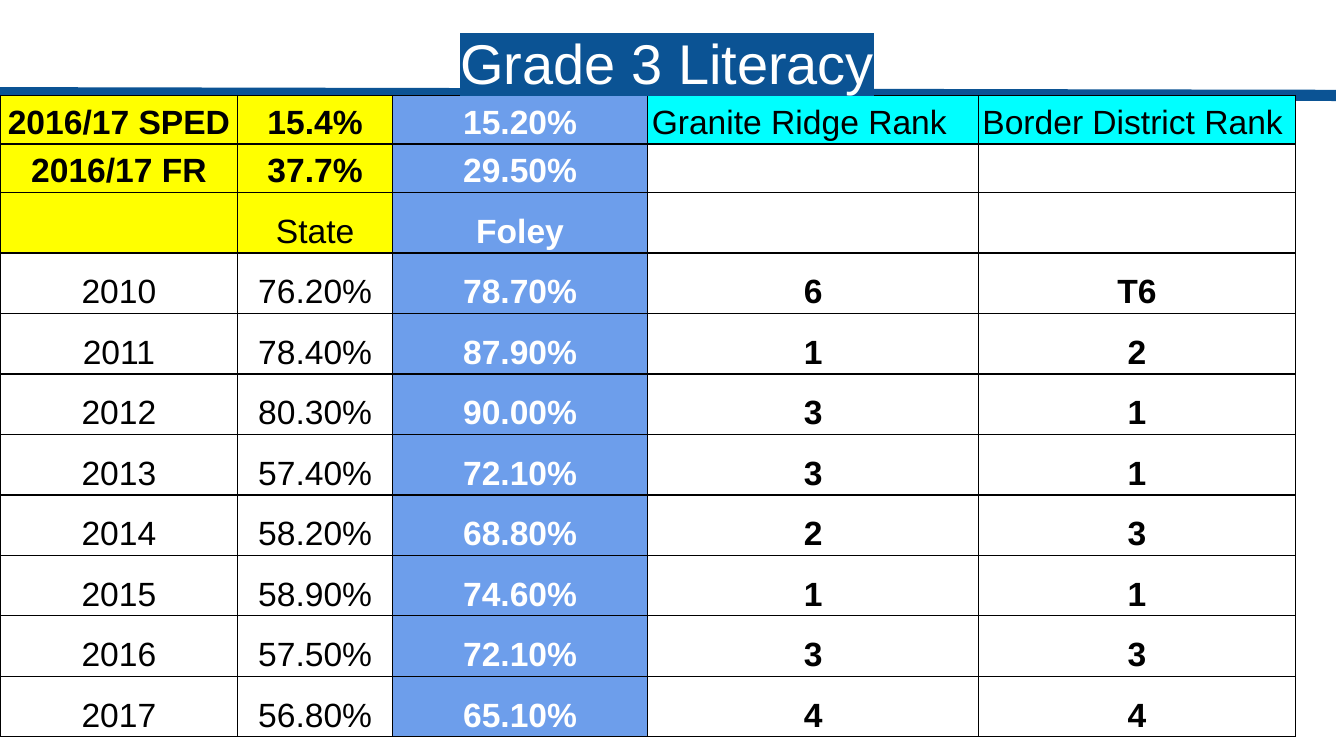
from lxml.etree import SubElement
from pptx import Presentation
from pptx.dml.color import RGBColor
from pptx.enum.shapes import MSO_CONNECTOR
from pptx.enum.text import MSO_ANCHOR, PP_ALIGN
from pptx.oxml import parse_xml
from pptx.oxml.ns import nsdecls, qn
from pptx.util import Inches, Pt

WIDE = 10
HIGH = WIDE * 9 / 16
NAVY, WHITE, BLACK = "0B5394", "FFFFFF", "000000"
YELLOW, BLUE, CYAN = "FFFF00", "6D9EEB", "00FFFF"
TOP = 0.71
COLS = [1.77, 1.15, 1.9, 2.46, 2.36]
ROWS = [0.36] * 2 + [0.45] * 9
HEAD = 3  # rows above the yearly results
DATA = [
    ["2016/17 SPED", "15.4%", "15.20%", "Granite Ridge Rank", "Border District Rank"],
    ["2016/17 FR", "37.7%", "29.50%", "", ""],
    ["", "State", "Foley", "", ""],
    ["2010", "76.20%", "78.70%", "6", "T6"],
    ["2011", "78.40%", "87.90%", "1", "2"],
    ["2012", "80.30%", "90.00%", "3", "1"],
    ["2013", "57.40%", "72.10%", "3", "1"],
    ["2014", "58.20%", "68.80%", "2", "3"],
    ["2015", "58.90%", "74.60%", "1", "1"],
    ["2016", "57.50%", "72.10%", "3", "3"],
    ["2017", "56.80%", "65.10%", "4", "4"],
]


def rgb(code):
    return RGBColor.from_string(code)


def style(par, size, color, bold=False, mark=None):
    for run in par.runs:
        font = run.font
        font.size, font.name, font.bold = Pt(size), "Arial", bold
        font.color.rgb = rgb(color)
        if mark:
            # The highlight follows the text fill
            run._r.rPr.find(qn("a:solidFill")).addnext(parse_xml(
                f'<a:highlight {nsdecls("a")}><a:srgbClr val="{mark}"/></a:highlight>'))


def inset(box, side, end):
    box.margin_left = box.margin_right = Inches(side)
    box.margin_top = box.margin_bottom = Inches(end)


def edge(cell):
    # Borders come before the fill in the cell properties
    props = cell._tc.get_or_add_tcPr()
    for spot, tag in enumerate(("lnL", "lnR", "lnT", "lnB")):
        props.insert(spot, parse_xml(
            f'<a:{tag} {nsdecls("a")} w="{Pt(0.75)}"><a:solidFill>'
            f'<a:srgbClr val="{BLACK}"/></a:solidFill></a:{tag}>'))


def shade(row, col):
    if col == 2:
        return BLUE
    if col < 2 and row < HEAD:
        return YELLOW
    return CYAN if row == 0 else None


def fill_cell(cell, text, row, col):
    cell.vertical_anchor = MSO_ANCHOR.BOTTOM
    inset(cell, 0.03, 0.02)
    color = shade(row, col)
    if color:
        cell.fill.solid()
        cell.fill.fore_color.rgb = rgb(color)
    else:
        cell.fill.background()
    edge(cell)

    rank = col > 2
    cell.text_frame.text = text
    par = cell.text_frame.paragraphs[0]
    par.alignment = PP_ALIGN.LEFT if rank and row == 0 else PP_ALIGN.CENTER
    if row > 1 or col == 0:
        par.line_spacing = 1.15
    bold = col == 2 or (row > 0 if rank else row < 2)
    style(par, 18, WHITE if col == 2 else BLACK, bold,
          WHITE if rank and row >= HEAD else None)


def add_grid(slide):
    table = slide.shapes.add_table(
        len(ROWS), len(COLS), 0, Inches(TOP),
        Inches(sum(COLS)), Inches(sum(ROWS))).table
    table.first_row = table.horz_banding = False
    for col, wide in zip(table.columns, COLS):
        col.width = Inches(wide)
    for row, high in zip(table.rows, ROWS):
        row.height = Inches(high)
    for row, line in enumerate(DATA):
        for col, text in enumerate(line):
            fill_cell(table.cell(row, col), text, row, col)


def add_rule(slide):
    rule = slide.shapes.add_connector(
        MSO_CONNECTOR.STRAIGHT, 0, Inches(TOP - 0.02), Inches(9.94), Inches(TOP))
    rule.line.color.rgb = rgb(NAVY)
    rule.line.width = Pt(6)
    SubElement(rule._element.spPr, qn("a:effectLst"))


def add_title(slide, text):
    box = slide.shapes.add_textbox(
        Inches(-0.01), Inches(0.11), Inches(9.95), Inches(0.65))
    frame = box.text_frame
    frame.word_wrap = True
    inset(frame, 0.1, 0.1)
    frame.text = text
    par = frame.paragraphs[0]
    par.alignment = PP_ALIGN.CENTER
    style(par, 30, WHITE, mark=NAVY)


def main():
    deck = Presentation()
    deck.slide_width, deck.slide_height = Inches(WIDE), Inches(HIGH)
    slide = deck.slides.add_slide(deck.slide_layouts[6])

    # Rule under the title, then the results, then the title on top
    add_rule(slide)
    add_grid(slide)
    add_title(slide, "Grade 3 Literacy")
    deck.save("out.pptx")


if __name__ == "__main__":
    main()
